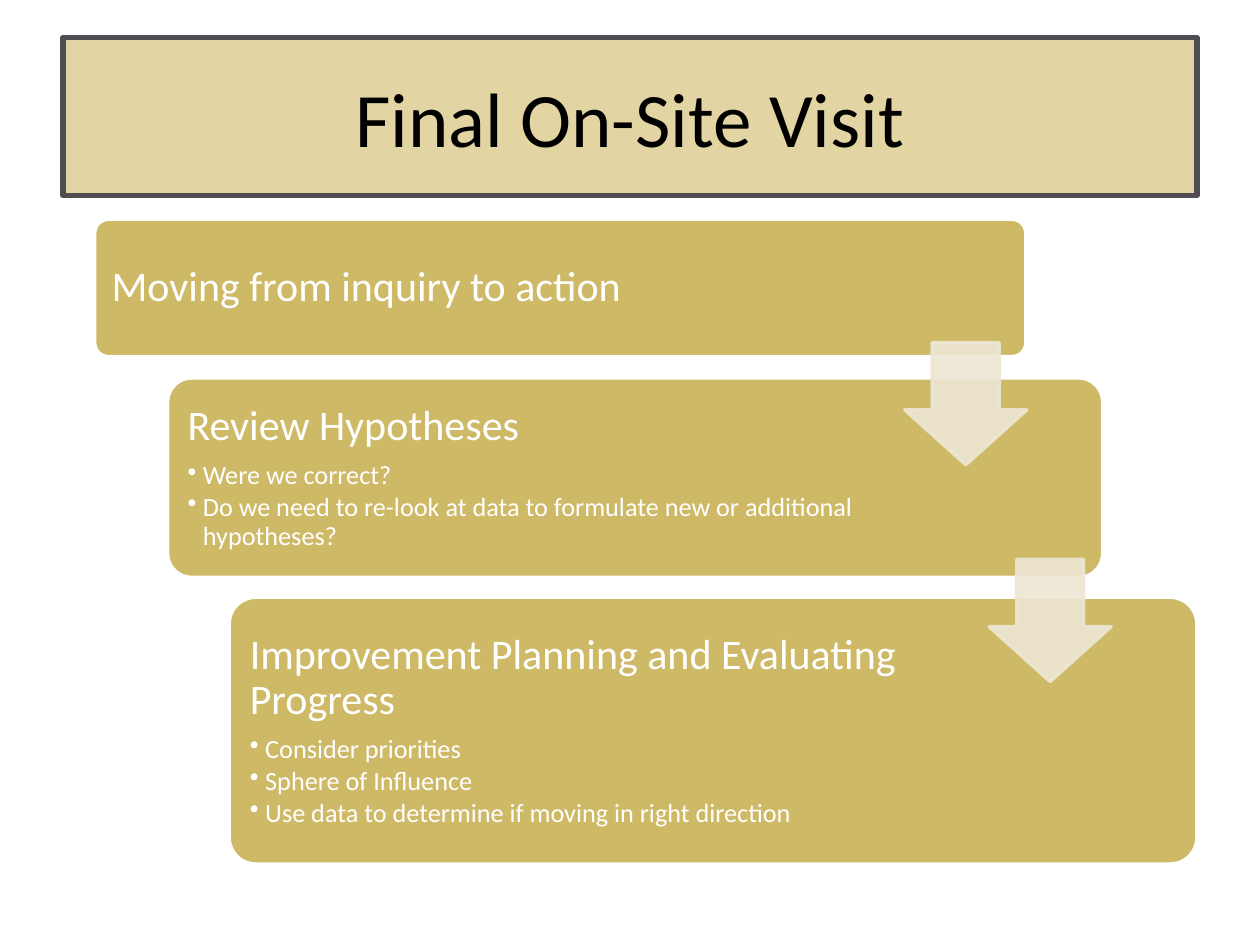
import pptx
import pptx.dml.color
import pptx.enum.shapes
import pptx.enum.text
import pptx.oxml
import pptx.oxml.ns
import pptx.util

Cm = pptx.util.Cm
Pt = pptx.util.Pt
Shapes = pptx.enum.shapes.MSO_SHAPE
Align = pptx.enum.text.PP_ALIGN
Anchor = pptx.enum.text.MSO_ANCHOR

COLORS = {
    "title_fill": "E2D5A3",
    "title_line": "4F4D52",
    "step": "CEB966",
    "arrow": "EDE6D3",
    "white": "FFFFFF",
    "black": "000000",
}

STEPS = [
    ((1.91, 4.42, 18.77, 2.77), 0.1, "Moving from inquiry to action", []),
    ((3.38, 7.62, 18.85, 4.02), 0.12, "Review Hypotheses", [
        "Were we correct?",
        "Do we need to re-look at data to formulate new or additional hypotheses?",
    ]),
    ((4.62, 12.04, 19.51, 5.38), 0.1, "Improvement Planning and Evaluating Progress", [
        "Consider priorities",
        "Sphere of Influence",
        "Use data to determine if moving in right direction",
    ]),
]
ARROWS = [(18.24, 6.91), (19.94, 11.28)]


class SlideBuilder:
    """Holds the style and the current slide, and adds each kind of element."""

    font_name = "Calibri"
    heading_size = 24
    bullet_size = 15
    bullet_indent = Cm(0.31)
    arrow_size = 2.46

    def __init__(self, slide):
        self.slide = slide

    def color(self, name):
        return pptx.dml.color.RGBColor.from_string(COLORS[name])

    def paint(self, shape, fill, line, width):
        shape.fill.solid()
        shape.fill.fore_color.rgb = self.color(fill)
        shape.line.color.rgb = self.color(line)
        shape.line.width = Pt(width)

    def style(self, para, size, color, align):
        para.alignment = align
        para.font.name = self.font_name
        para.font.size = Pt(size)
        para.font.color.rgb = self.color(color)

    def shape(self, kind, bounds):
        shape = self.slide.shapes.add_shape(kind, *map(Cm, bounds))
        shape.shadow.inherit = False
        return shape

    def title(self, text, bounds):
        title = self.slide.shapes.title
        title.left, title.top, title.width, title.height = map(Cm, bounds)
        self.paint(title, "title_fill", "title_line", 3)
        title.text_frame.text = text
        title.text_frame.vertical_anchor = Anchor.MIDDLE
        self.style(title.text_frame.paragraphs[0], 44, "black", Align.CENTER)

    def step(self, bounds, corner, heading, bullets):
        box = self.shape(Shapes.ROUNDED_RECTANGLE, bounds)
        box.adjustments[0] = corner
        self.paint(box, "step", "white", 2)
        frame = box.text_frame
        frame.word_wrap = True
        frame.vertical_anchor = Anchor.MIDDLE
        frame.margin_left = frame.margin_top = frame.margin_bottom = Cm(0.26)
        frame.margin_right = Cm(4.3)
        self.line(frame.paragraphs[0], heading, self.heading_size, 7)
        for bullet in bullets:
            para = frame.add_paragraph()
            self.line(para, bullet, self.bullet_size, 2)
            self.bullet(para)

    def line(self, para, text, size, space_after):
        para.text = text
        para.line_spacing = 0.9
        para.space_after = Pt(space_after)
        self.style(para, size, "white", Align.LEFT)

    def bullet(self, para):
        para.level = 1
        properties = para._p.get_or_add_pPr()
        properties.set("marL", str(self.bullet_indent))
        properties.set("indent", str(-self.bullet_indent))
        namespace = pptx.oxml.ns.nsdecls("a")
        properties.append(pptx.oxml.parse_xml(f'<a:buChar {namespace} char="•"/>'))

    def arrow(self, left, top):
        arrow = self.shape(Shapes.DOWN_ARROW, (left, top, self.arrow_size, self.arrow_size))
        arrow.adjustments[0] = 0.55
        arrow.adjustments[1] = 0.45
        self.paint(arrow, "arrow", "arrow", 2)
        namespace = pptx.oxml.ns.nsdecls("a")
        for color in arrow._element.spPr.iter(pptx.oxml.ns.qn("a:srgbClr")):
            color.append(pptx.oxml.parse_xml(f'<a:alpha {namespace} val="90000"/>'))


def main():
    deck = pptx.Presentation()
    deck.slide_width, deck.slide_height = Cm(25.4), Cm(19.05)
    page = SlideBuilder(deck.slides.add_slide(deck.slide_layouts[5]))
    page.title("Final On-Site Visit", (1.27, 0.76, 22.86, 3.18))
    for step in STEPS:
        page.step(*step)
    for position in ARROWS:
        page.arrow(*position)
    deck.save("out.pptx")


if __name__ == "__main__":
    main()
